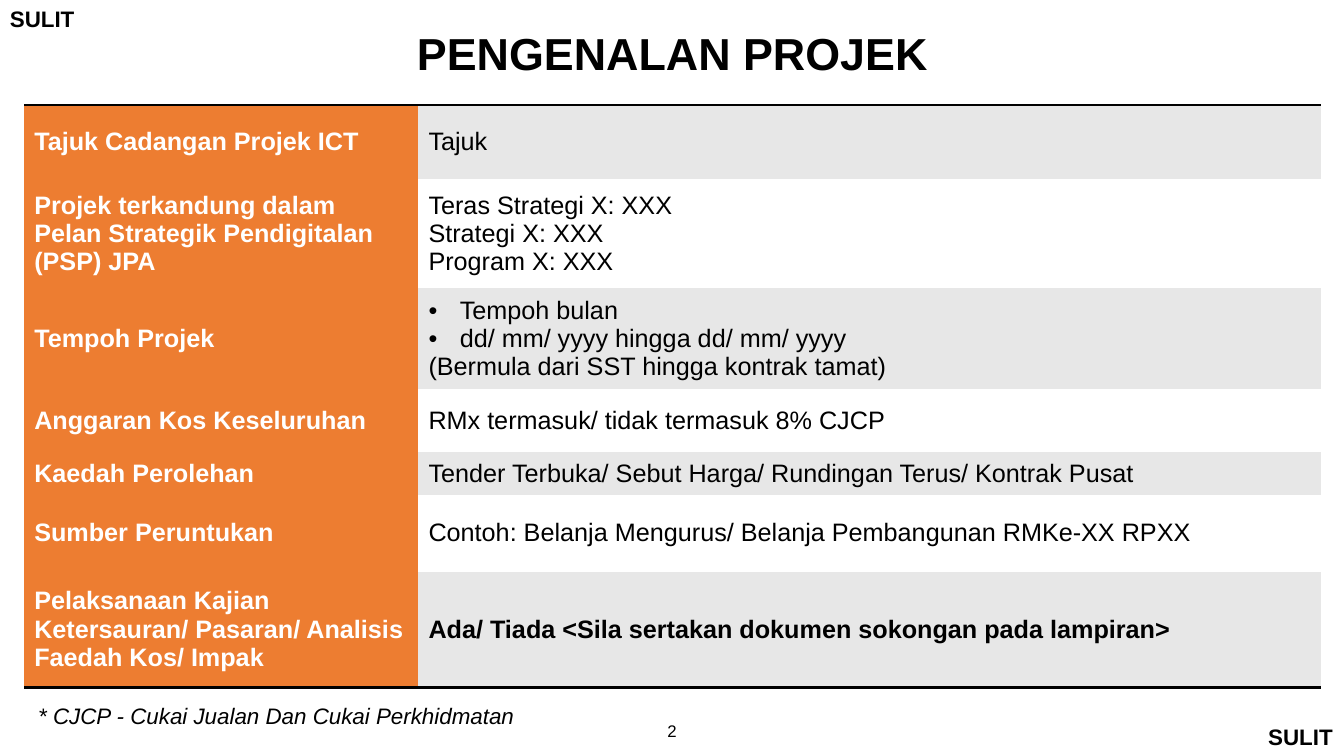
import pptx
import pptx.dml.color
import pptx.enum.text
import pptx.oxml
import pptx.oxml.ns
import pptx.util
from pptx.util import Inches

RGBColor = pptx.dml.color.RGBColor
Align = pptx.enum.text.PP_ALIGN
Anchor = pptx.enum.text.MSO_ANCHOR
AutoSize = pptx.enum.text.MSO_AUTO_SIZE

BLACK = RGBColor(0x00, 0x00, 0x00)
WHITE = RGBColor(0xFF, 0xFF, 0xFF)
ORANGE = RGBColor(0xED, 0x7D, 0x31)
GREY = RGBColor(0xE7, 0xE7, 0xE7)

FONT = "Arial"
NO_STYLE_NO_GRID = "{2D5ABB26-0587-4C30-8999-92F81FD0307C}"
BULLET = "• "
COLUMN_WIDTHS = (3.91, 8.95)

# Row height, label, lines of the answer
PROJECT_ROWS = [
    (0.74, "Tajuk Cadangan Projek ICT", ["Tajuk"]),
    (1.08, "Projek terkandung dalam Pelan Strategik Pendigitalan (PSP) JPA",
     ["Teras Strategi X: XXX", "Strategi X: XXX", "Program X: XXX"]),
    (1.0, "Tempoh Projek",
     [BULLET + "Tempoh bulan", BULLET + "dd/ mm/ yyyy hingga dd/ mm/ yyyy",
      "(Bermula dari SST hingga kontrak tamat)"]),
    (0.62, "Anggaran Kos Keseluruhan", ["RMx termasuk/ tidak termasuk 8% CJCP"]),
    (0.43, "Kaedah Perolehan",
     ["Tender Terbuka/ Sebut Harga/ Rundingan Terus/ Kontrak Pusat"]),
    (0.76, "Sumber Peruntukan",
     ["Contoh: Belanja Mengurus/ Belanja Pembangunan RMKe-XX RPXX"]),
    (1.15, "Pelaksanaan Kajian Ketersauran/ Pasaran/ Analisis Faedah Kos/ Impak",
     ["Ada/ Tiada <Sila sertakan dokumen sokongan pada lampiran>"]),
]


def add_bullet(paragraph):
    properties = paragraph._p.get_or_add_pPr()
    properties.set("marL", str(Inches(0.31)))
    properties.set("indent", str(-Inches(0.31)))
    namespace = pptx.oxml.ns.nsdecls("a")
    for tag in ('buFont typeface="Arial"', 'buChar char="•"'):
        properties.append(pptx.oxml.parse_xml(f"<a:{tag} {namespace}/>"))


def write_text(frame, lines, size=18, color=BLACK, bold=False, italic=False,
               align=Align.LEFT):
    """Fill a text frame, one paragraph per line; a leading BULLET makes a list item."""
    for index, line in enumerate(lines):
        paragraph = frame.paragraphs[0] if index == 0 else frame.add_paragraph()
        paragraph.alignment = align
        if line.startswith(BULLET):
            add_bullet(paragraph)
        run = paragraph.add_run()
        run.text = line.removeprefix(BULLET)
        run.font.name = FONT
        run.font.size = pptx.util.Pt(size)
        run.font.color.rgb = color
        run.font.bold = bold
        run.font.italic = italic


def add_label(slide, text, left, top, width, height, wrap=False, insets=(0.1, 0.05),
              **text_format):
    """Add a one-line text box; insets are the side and the top/bottom margin."""
    box = slide.shapes.add_textbox(Inches(left), Inches(top), Inches(width), Inches(height))
    frame = box.text_frame
    frame.word_wrap = wrap
    frame.auto_size = AutoSize.NONE if wrap else AutoSize.SHAPE_TO_FIT_TEXT
    side, edge = insets
    frame.margin_left = frame.margin_right = Inches(side)
    frame.margin_top = frame.margin_bottom = Inches(edge)
    write_text(frame, [text], **text_format)


def add_rule(cell, side):
    """Draw a black 2 pt border; side is "T" or "B"."""
    border = pptx.oxml.parse_xml(
        f'<a:ln{side} {pptx.oxml.ns.nsdecls("a")} w="{pptx.util.Pt(2)}">'
        f'<a:solidFill><a:srgbClr val="{BLACK}"/></a:solidFill></a:ln{side}>')
    cell._tc.get_or_add_tcPr().insert(0, border)


def fill_cell(cell, lines, background, **text_format):
    cell.fill.solid()
    cell.fill.fore_color.rgb = background
    cell.vertical_anchor = Anchor.MIDDLE
    write_text(cell.text_frame, lines, **text_format)


def add_project_table(slide):
    total_height = sum(height for height, _, _ in PROJECT_ROWS)
    frame = slide.shapes.add_table(
        len(PROJECT_ROWS), len(COLUMN_WIDTHS), Inches(0.24), Inches(1.04),
        Inches(sum(COLUMN_WIDTHS)), Inches(total_height))
    table = frame.table
    table.first_row = False
    table.horz_banding = False
    table._tbl.tblPr.find(pptx.oxml.ns.qn("a:tableStyleId")).text = NO_STYLE_NO_GRID
    for column, width in zip(table.columns, COLUMN_WIDTHS):
        column.width = Inches(width)

    last = len(PROJECT_ROWS) - 1
    for index, (height, label, answer) in enumerate(PROJECT_ROWS):
        table.rows[index].height = Inches(height)
        fill_cell(table.cell(index, 0), [label], ORANGE, color=WHITE, bold=True)
        fill_cell(table.cell(index, 1), answer, WHITE if index % 2 else GREY,
                  bold=index == last)
    for column in range(len(COLUMN_WIDTHS)):
        add_rule(table.cell(0, column), "T")
        add_rule(table.cell(last, column), "B")


def main():
    deck = pptx.Presentation()
    deck.slide_width = Inches(13.33)
    deck.slide_height = Inches(7.5)
    slide = deck.slides.add_slide(deck.slide_layouts[6])

    for left, top in ((0, 0), (12.48, 7.13)):
        add_label(slide, "SULIT", left, top, 0.85, 0.37, size=16, bold=True)
    add_project_table(slide)
    add_label(slide, "PENGENALAN PROJEK", 4.04, 0.21, 5.26, 0.61, insets=(0.07, 0.04),
              size=32, bold=True, align=Align.CENTER)
    add_label(slide, "* CJCP - Cukai Jualan Dan Cukai Perkhidmatan",
              0.28, 6.92, 5.05, 0.37, size=16, italic=True)
    add_label(slide, "2", 6.4, 7.1, 0.53, 0.4, wrap=True, size=12, align=Align.CENTER)

    deck.save("out.pptx")


if __name__ == "__main__":
    main()
